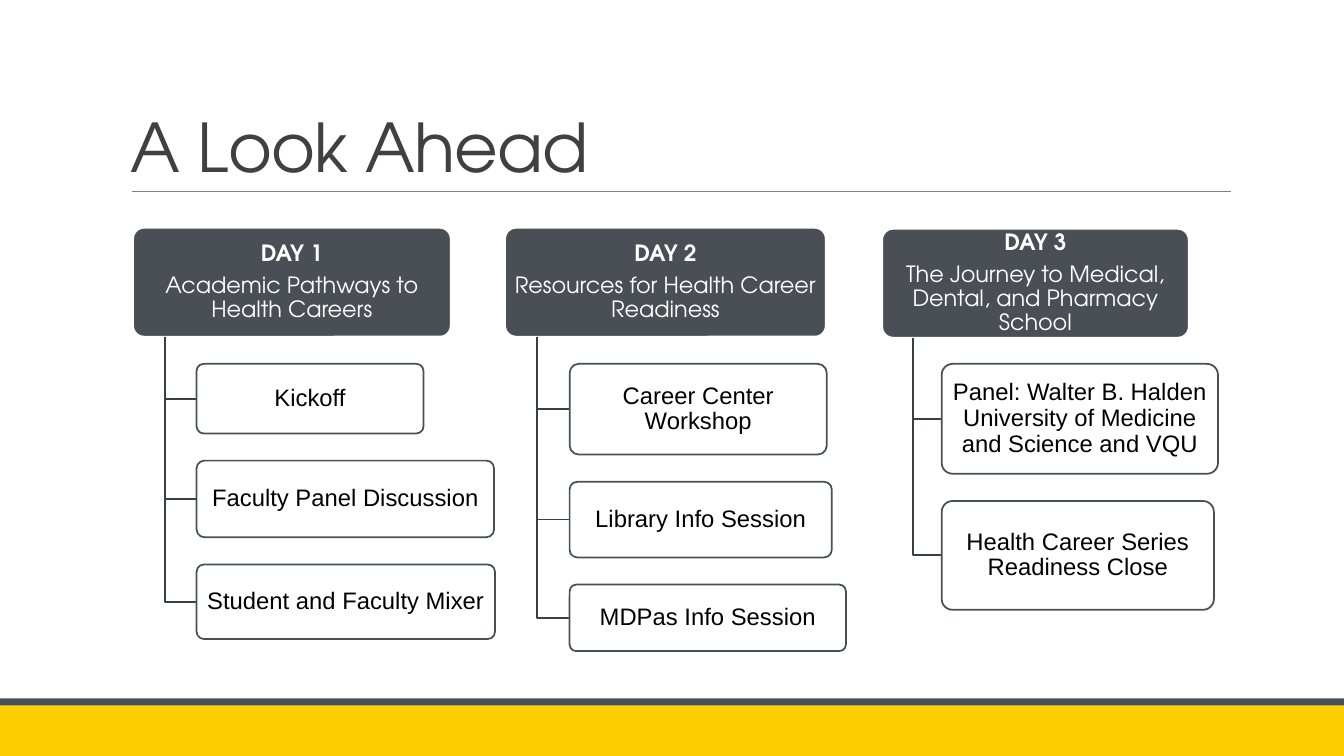
from pptx import Presentation
from pptx.dml.color import RGBColor
from pptx.enum.shapes import MSO_CONNECTOR, MSO_SHAPE
from pptx.enum.text import MSO_ANCHOR, PP_ALIGN
from pptx.oxml.ns import qn
from pptx.util import Inches, Pt
from lxml import etree

RECT, ROUNDED = MSO_SHAPE.RECTANGLE, MSO_SHAPE.ROUNDED_RECTANGLE
STRAIGHT = MSO_CONNECTOR.STRAIGHT
MIDDLE, BOTTOM = MSO_ANCHOR.MIDDLE, MSO_ANCHOR.BOTTOM
LEFT, CENTER = PP_ALIGN.LEFT, PP_ALIGN.CENTER

COLORS = {
    "white": "FFFFFF", "black": "000000", "slate": "4A4F55", "branch": "3B3F44",
    "gold": "FFCE00", "title": "404040", "rule": "808080",
}
HEADING_FONT, BODY_FONT = "TeX Gyre Adventor", "Arial"
SLIDE_W, SLIDE_H = 13.33, 7.5
HEADER_H, EVENTS_TOP, EVENT_GAP = 1.08, 3.61, 0.27

# Each day: header left, top, width; indent of events; events as text, width, height
DAYS = [
    ("DAY 1", "Academic Pathways to Health Careers", 1.32, 2.26, 3.15, 0.63, [
        ("Kickoff", 2.25, 0.69),
        ("Faculty Panel Discussion", 2.95, 0.76),
        ("Student and Faculty Mixer", 2.96, 0.74)]),
    ("DAY 2", "Resources for Health Career Readiness", 5.01, 2.26, 3.18, 0.64, [
        ("Career Center Workshop", 2.55, 0.9),
        ("Library Info Session", 2.6, 0.75),
        ("MDPas Info Session", 2.74, 0.66)]),
    ("DAY 3", "The Journey to Medical, Dental, and Pharmacy School",
     8.75, 2.27, 3.04, 0.59, [
         ("Panel: Walter B. Halden University of Medicine and Science and VQU",
          2.74, 1.09),
         ("Health Career Series Readiness Close", 2.7, 1.08)]),
]


def rgb(name):
    return RGBColor.from_string(COLORS[name])


def add_box(slide, kind, left, top, width, height, fill, line=None):
    box = slide.shapes.add_shape(
        kind, Inches(left), Inches(top), Inches(width), Inches(height))
    box.shadow.inherit = False
    box.fill.solid()
    box.fill.fore_color.rgb = rgb(fill)
    if line:
        box.line.color.rgb = rgb(line)
        box.line.width = Pt(1.25)
    else:
        box.line.fill.background()
    if kind == ROUNDED:
        box.adjustments[0] = 0.1
    return box


def set_frame(frame, anchor, side, edge):
    frame.word_wrap = True
    frame.vertical_anchor = anchor
    frame.margin_left = frame.margin_right = Inches(side)
    frame.margin_top = frame.margin_bottom = Inches(edge)


def write(paragraph, text, font, size, color, bold=False, align=CENTER,
          spacing=0.9, after=0):
    paragraph.alignment = align
    paragraph.line_spacing = spacing
    paragraph.space_after = Pt(after)
    run = paragraph.add_run()
    run.text = text
    run.font.name = font
    run.font.size = Pt(size)
    run.font.bold = bold
    run.font.color.rgb = rgb(color)
    return run


def add_footer(slide, top, height):
    stripe = 0.07
    add_box(slide, RECT, 0, top, SLIDE_W, stripe, "slate")
    add_box(slide, RECT, 0, top + stripe, SLIDE_W, height - stripe, "gold")


def add_title(slide, left, top, width, height):
    title = slide.shapes.add_textbox(
        Inches(left), Inches(top), Inches(width), Inches(height))
    set_frame(title.text_frame, BOTTOM, 0.1, 0.05)
    run = write(title.text_frame.paragraphs[0], "A Look Ahead", HEADING_FONT,
                48, "title", align=LEFT, spacing=0.85)
    run.font._element.set("spc", "-50")

    # Rule under the title
    base = Inches(top + height)
    rule = slide.shapes.add_connector(
        STRAIGHT, Inches(left + 0.11), base, Inches(left + width + 0.01), base)
    rule.line.color.rgb = rgb("rule")
    rule.line.width = Pt(0.5)
    etree.SubElement(rule._element.spPr, qn("a:effectLst"))


def add_branch(slide, left, top, right, bottom):
    builder = slide.shapes.build_freeform(Inches(left), Inches(top))
    builder.add_line_segments(
        [(Inches(left), Inches(bottom)), (Inches(right), Inches(bottom))],
        close=False)
    branch = builder.convert_to_shape()
    branch.shadow.inherit = False
    branch.fill.background()
    branch.line.color.rgb = rgb("branch")
    branch.line.width = Pt(1.25)


def add_event(slide, text, left, top, width, height):
    event = add_box(slide, ROUNDED, left, top, width, height, "white", "slate")
    tint = event._element.spPr.find(qn("a:solidFill"))[0]
    etree.SubElement(tint, qn("a:alpha"), val="90000")
    set_frame(event.text_frame, MIDDLE, 0.04, 0.02)
    write(event.text_frame.paragraphs[0], text, BODY_FONT, 17, "black")


def add_day(slide, day, theme, left, top, width, indent, events):
    # Header
    header = add_box(slide, ROUNDED, left, top, width, HEADER_H, "slate", "white")
    frame = header.text_frame
    set_frame(frame, MIDDLE, 0.03, 0.02)
    write(frame.paragraphs[0], day, HEADING_FONT, 16, "white", bold=True, after=5.6)
    write(frame.add_paragraph(), theme, HEADING_FONT, 16, "white")

    # Events hanging from the header
    stem, event_left, event_top = left + width / 10, left + indent, EVENTS_TOP
    for text, event_w, event_h in events:
        add_branch(slide, stem, top + HEADER_H, event_left, event_top + event_h / 2)
        add_event(slide, text, event_left, event_top, event_w, event_h)
        event_top += event_h + EVENT_GAP


def main():
    deck = Presentation()
    deck.slide_width, deck.slide_height = Inches(SLIDE_W), Inches(SLIDE_H)
    slide = deck.slides.add_slide(deck.slide_layouts[6])
    add_footer(slide, 6.93, 0.57)
    add_title(slide, 1.2, 0.31, 11, 1.59)
    for day in DAYS:
        add_day(slide, *day)
    deck.save("out.pptx")


if __name__ == "__main__":
    main()
